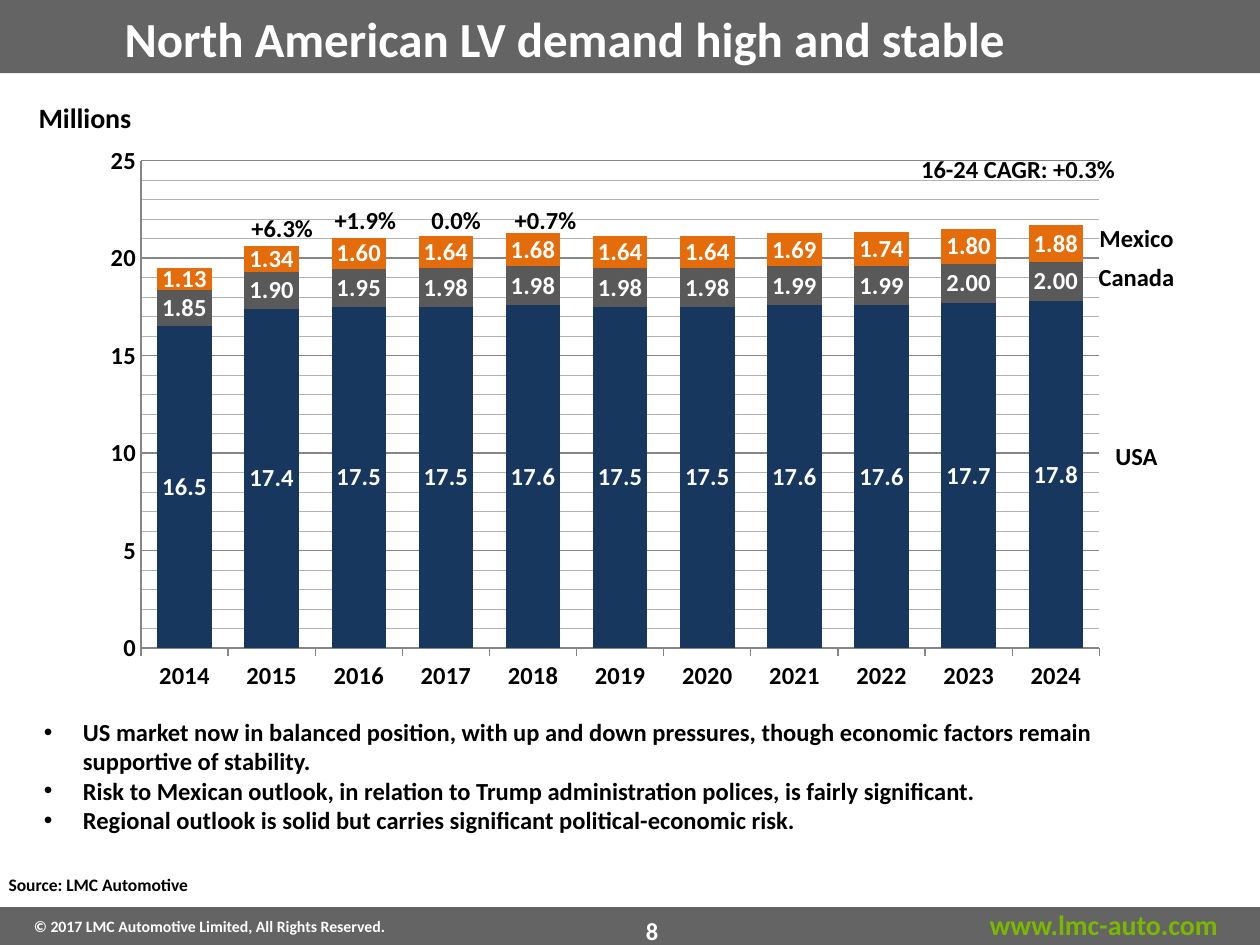
from lxml import etree
from pptx import Presentation
from pptx.chart.data import CategoryChartData as ChartData
from pptx.dml.color import RGBColor as RGB
from pptx.enum.chart import XL_CHART_TYPE as Kind, XL_TICK_MARK as Tick
from pptx.enum.shapes import MSO_SHAPE as Shape
from pptx.enum.text import PP_ALIGN as Align
from pptx.oxml import parse_xml
from pptx.oxml.ns import nsdecls, qn
from pptx.util import Inches, Pt

FONT = "Calibri"
BLACK, WHITE = RGB(0, 0, 0), RGB(255, 255, 255)
BAR, LIME = RGB(0x64, 0x64, 0x64), RGB(0x7A, 0xB8, 0x00)
NAVY, GREY, ORANGE = RGB(0x17, 0x37, 0x5E), RGB(0x59, 0x59, 0x59), RGB(0xE4, 0x6C, 0x0A)
AXIS, MINOR = RGB(0x86, 0x86, 0x86), RGB(0xB3, 0xB3, 0xB3)

YEARS = [str(year) for year in range(2014, 2025)]
SERIES = [  # name, colour, label format, values
    ("USA", NAVY, "#,##0.0",
     (16.5, 17.4, 17.5, 17.5, 17.6, 17.5, 17.5, 17.6, 17.6, 17.7, 17.8)),
    ("Canada", GREY, "0.00",
     (1.85, 1.9, 1.95, 1.98, 1.98, 1.98, 1.98, 1.99, 1.99, 2, 2)),
    ("Mexico", ORANGE, "0.00",
     (1.13, 1.34, 1.6, 1.64, 1.68, 1.64, 1.64, 1.69, 1.74, 1.8, 1.88)),
]
BARS = [(0, 0.58), (7.2, 0.3)]  # top, height
CHART = (0.71, 1.05, 8.18, 4.5)
PLOT = {"x": 0.05, "y": 0.05, "w": 0.93, "h": 0.86}  # shares of the chart

MID, LEFT = Align.CENTER, Align.LEFT
TEXTS = [  # text, place, size, colour, alignment
    ("www.lmc-auto.com", (7.62, 7.15, 2.28, 0.37), 16, LIME, MID),
    ("© 2017 LMC Automotive Limited, All Rights Reserved.",
     (0.17, 7.23, 3.59, 0.25), 9, WHITE, LEFT),
    ("8", (3.38, 7.22, 3.59, 0.33), 14, WHITE, MID),
    ("North American LV demand high and stable",
     (0.89, 0.02, 8.25, 0.57), 28, WHITE, LEFT),
    ("Millions", (0.2, 0.75, 0.95, 0.37), 16, BLACK, MID),
    ("Source: LMC Automotive", (-0.03, 6.89, 3.57, 0.27), 10, BLACK, LEFT),
    ("16-24 CAGR: +0.3%", (7.01, 1.17, 2.14, 0.34), 14, BLACK, MID),
]
NOTES = [  # text, centre, top
    ("Mexico", 9.02, 1.72), ("Canada", 9.02, 2.03), ("USA", 9.02, 3.45),
    ("+6.3%", 2.24, 1.64), ("+1.9%", 2.9, 1.58),
    ("0.0%", 3.62, 1.58), ("+0.7%", 4.33, 1.58),
]
NOTE_W, NOTE_H = 1.06, 0.34
POINTS = [
    "US market now in balanced position, with up and down pressures, "
    "though economic factors remain supportive of stability.",
    "Risk to Mexican outlook, in relation to Trump administration polices, "
    "is fairly significant.",
    "Regional outlook is solid but carries significant political-economic risk.",
]


def style(font, size, color=BLACK):
    font.name, font.size, font.bold = FONT, Pt(size), True
    font.color.rgb = color


def add_text(slide, text, place, size, color, align):
    frame = slide.shapes.add_textbox(*map(Inches, place)).text_frame
    frame.word_wrap = True
    frame.text = text
    for para in frame.paragraphs:
        para.alignment = align
        for run in para.runs:
            style(run.font, size, color)
    return frame


def add_bullet(para):
    props = para._p.get_or_add_pPr()
    props.set("marL", str(Inches(0.31)))
    props.set("indent", str(-Inches(0.31)))
    etree.SubElement(props, qn("a:buFont")).set("typeface", "Arial")
    etree.SubElement(props, qn("a:buChar")).set("char", "•")


def set_plot(chart):
    """Fix the inner plot area at its share of the chart."""
    area = chart._chartSpace.find(".//" + qn("c:plotArea"))
    for old in area.findall(qn("c:layout")):
        area.remove(old)
    modes = '<c:xMode val="edge"/><c:yMode val="edge"/>'
    sizes = "".join(f'<c:{key} val="{val}"/>' for key, val in PLOT.items())
    area.insert(0, parse_xml(
        f'<c:layout {nsdecls("c")}><c:manualLayout><c:layoutTarget val="inner"/>'
        f"{modes}{sizes}</c:manualLayout></c:layout>"))


def draw_line(line, color, width=0.75):
    line.color.rgb, line.width = color, Pt(width)


def draw_minor(chart):
    """Colour the minor gridlines."""
    grid = chart._chartSpace.find(".//" + qn("c:minorGridlines"))
    grid.append(parse_xml(
        f'<c:spPr {nsdecls("c", "a")}><a:ln w="{Pt(0.5)}"><a:solidFill>'
        f'<a:srgbClr val="{MINOR}"/></a:solidFill></a:ln></c:spPr>'))


def add_demand(slide):
    data = ChartData()
    data.categories = YEARS
    for name, _, _, vals in SERIES:
        data.add_series(name, vals)
    chart = slide.shapes.add_chart(
        Kind.COLUMN_STACKED, *map(Inches, CHART), data).chart
    chart.has_legend = chart.has_title = False
    style(chart.font, 14)
    plot = chart.plots[0]
    plot.gap_width, plot.overlap, plot.vary_by_categories = 60, 100, False
    for series, (_, color, form, _) in zip(plot.series, SERIES):
        series.format.fill.solid()
        series.format.fill.fore_color.rgb = color
        labels = series.data_labels
        labels.show_value = True
        labels.number_format, labels.number_format_is_linked = form, False
        style(labels.font, 14, WHITE)
    years, units = chart.category_axis, chart.value_axis
    for axis in (years, units):
        style(axis.tick_labels.font, 14)
        draw_line(axis.format.line, AXIS)
    years.major_tick_mark, units.major_tick_mark = Tick.OUTSIDE, Tick.NONE
    units.minimum_scale, units.maximum_scale = 0, 25
    units.major_unit, units.minor_unit = 5, 1
    units.tick_labels.number_format = "0"
    units.tick_labels.number_format_is_linked = False
    units.has_major_gridlines = units.has_minor_gridlines = True
    draw_line(units.major_gridlines.format.line, AXIS)
    draw_minor(chart)
    set_plot(chart)


def main():
    deck = Presentation()
    deck.slide_width, deck.slide_height = Inches(10), Inches(7.5)
    slide = deck.slides.add_slide(deck.slide_layouts[6])
    for top, height in BARS:
        bar = slide.shapes.add_shape(
            Shape.RECTANGLE, 0, Inches(top), deck.slide_width, Inches(height))
        bar.shadow.inherit = False
        bar.fill.solid()
        bar.fill.fore_color.rgb = BAR
        bar.line.fill.background()
    add_demand(slide)
    for item in TEXTS:
        add_text(slide, *item)
    for text, mid, top in NOTES:
        place = (mid - NOTE_W / 2, top, NOTE_W, NOTE_H)
        add_text(slide, text, place, 14, BLACK, MID)
    frame = add_text(slide, "\n".join(POINTS), (0.25, 5.64, 9.17, 1.25),
                     14, BLACK, LEFT)
    for para in frame.paragraphs:
        add_bullet(para)
    deck.save("out.pptx")


if __name__ == "__main__":
    main()
